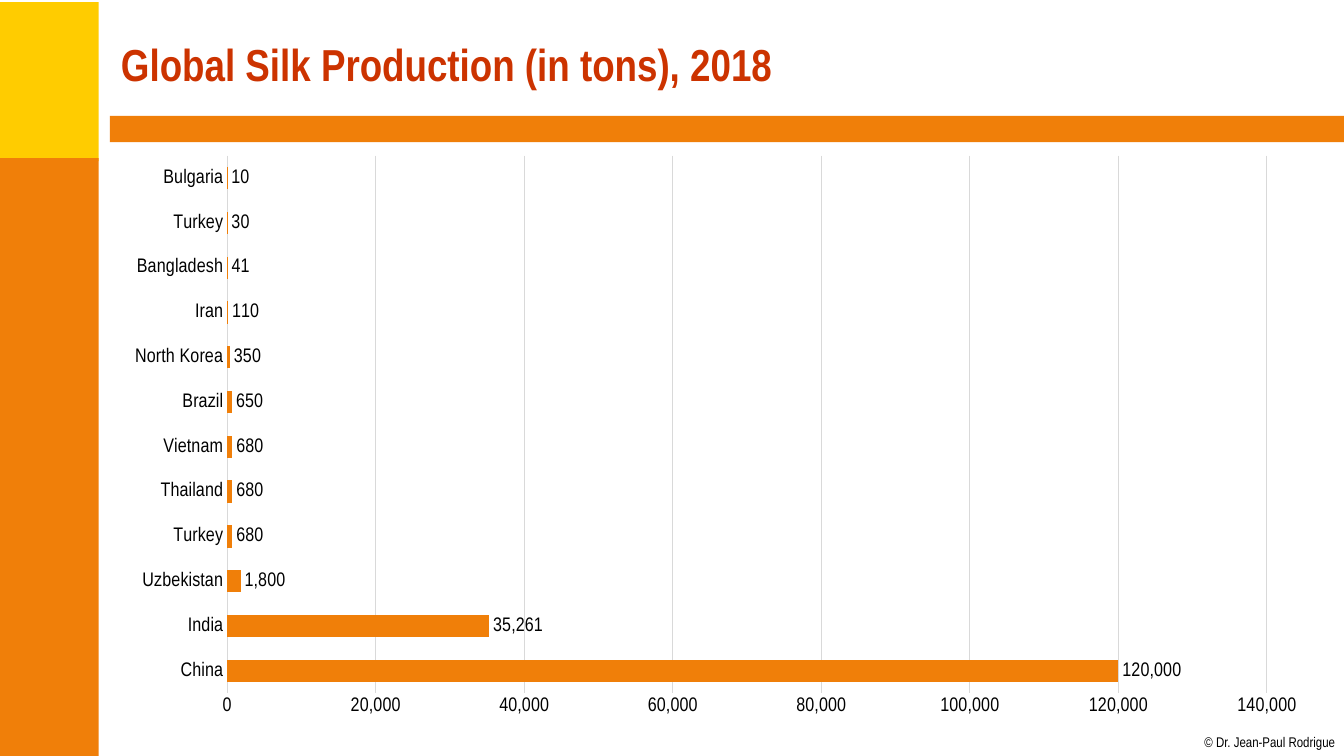
from pptx import Presentation
from pptx.chart.data import CategoryChartData
from pptx.dml.color import RGBColor
from pptx.enum.chart import XL_CHART_TYPE, XL_LABEL_POSITION, XL_TICK_MARK
from pptx.enum.shapes import MSO_SHAPE
from pptx.enum.text import MSO_ANCHOR, PP_ALIGN
from pptx.util import Inches, Pt

YELLOW = RGBColor(0xFF, 0xCC, 0x00)
ORANGE = RGBColor(0xF0, 0x7F, 0x09)
RED = RGBColor(0xCC, 0x33, 0x00)
GRAY = RGBColor(0xD9, 0xD9, 0xD9)
BLACK = RGBColor(0, 0, 0)
FONT = "Arial Narrow"

PRODUCTION = [
    ("China", 120000),
    ("India", 35261),
    ("Uzbekistan", 1800),
    ("Turkey", 680),
    ("Thailand", 680),
    ("Vietnam", 680),
    ("Brazil", 650),
    ("North Korea", 350),
    ("Iran", 110),
    ("Bangladesh", 41),
    ("Turkey", 30),
    ("Bulgaria", 10),
]


def format_font(font, size, color=BLACK, bold=False):
    font.name = FONT
    font.size = Pt(size)
    font.bold = bold
    font.color.rgb = color


def write_text(sp, text, size, color=BLACK, bold=False,
               align=PP_ALIGN.LEFT, anchor=MSO_ANCHOR.TOP):
    tf = sp.text_frame
    tf.vertical_anchor = anchor
    p = tf.paragraphs[0]
    p.alignment = align
    r = p.add_run()
    r.text = text
    format_font(r.font, size, color, bold)
    return tf


def place(sp, left, top, width, height):
    sp.left, sp.top = Inches(left), Inches(top)
    sp.width, sp.height = Inches(width), Inches(height)


def add_block(s, left, top, width, height, color):
    sp = s.shapes.add_shape(MSO_SHAPE.RECTANGLE, Inches(left), Inches(top),
                            Inches(width), Inches(height))
    sp.shadow.inherit = False
    sp.fill.solid()
    sp.fill.fore_color.rgb = color
    sp.line.fill.background()


def add_title(s, text):
    sp = s.shapes.title
    place(sp, 1.1, 0.11, 12, 1.04)
    write_text(sp, text, 32, RED, bold=True, anchor=MSO_ANCHOR.MIDDLE)


def add_copyright(s, text):
    sp = s.shapes.add_textbox(Inches(11.93), Inches(7.28), Inches(1.31), Inches(0.17))
    tf = write_text(sp, text, 10, align=PP_ALIGN.RIGHT)
    tf.word_wrap = False
    tf.margin_left = tf.margin_right = tf.margin_top = tf.margin_bottom = 0


def format_line(line, color):
    line.color.rgb = color
    line.width = Pt(0.75)


def add_production_chart(s):
    data = CategoryChartData(number_format="#,##0")
    data.categories = [country for country, tons in PRODUCTION]
    data.add_series("Series 1", [tons for country, tons in PRODUCTION])
    chart = s.shapes.add_chart(XL_CHART_TYPE.BAR_CLUSTERED, Inches(1.1), Inches(1.43),
                               Inches(12), Inches(5.79), data).chart
    chart.has_legend = False
    chart.has_title = False
    format_font(chart.font, 14)

    for axis in (chart.category_axis, chart.value_axis):
        axis.major_tick_mark = axis.minor_tick_mark = XL_TICK_MARK.NONE
        format_font(axis.tick_labels.font, 14)
    chart.category_axis.has_major_gridlines = False
    format_line(chart.category_axis.format.line, GRAY)

    values = chart.value_axis
    values.minimum_scale, values.maximum_scale, values.major_unit = 0, 140000, 20000
    values.tick_labels.number_format = "#,##0"
    values.tick_labels.number_format_is_linked = False
    values.format.line.fill.background()
    values.has_major_gridlines = True
    format_line(values.major_gridlines.format.line, GRAY)

    plot = chart.plots[0]
    plot.gap_width = 100
    plot.vary_by_categories = False
    bars = plot.series[0]
    bars.invert_if_negative = False
    bars.format.fill.solid()
    bars.format.fill.fore_color.rgb = ORANGE
    labels = bars.data_labels
    labels.show_value = True
    labels.number_format = "#,##0"
    labels.number_format_is_linked = False
    labels.position = XL_LABEL_POSITION.OUTSIDE_END
    format_font(labels.font, 14)


def main():
    prs = Presentation()
    prs.slide_width, prs.slide_height = Inches(13.33), Inches(7.5)
    s = prs.slides.add_slide(prs.slide_layouts[5])
    add_block(s, -0.02, 0.02, 1, 1.58, YELLOW)
    add_block(s, -0.02, 1.57, 1, 5.93, ORANGE)
    add_block(s, 1.09, 1.15, 12.24, 0.26, ORANGE)
    add_copyright(s, "© Dr. Jean-Paul Rodrigue")
    add_title(s, "Global Silk Production (in tons), 2018")
    add_production_chart(s)
    prs.save("out.pptx")


if __name__ == "__main__":
    main()
